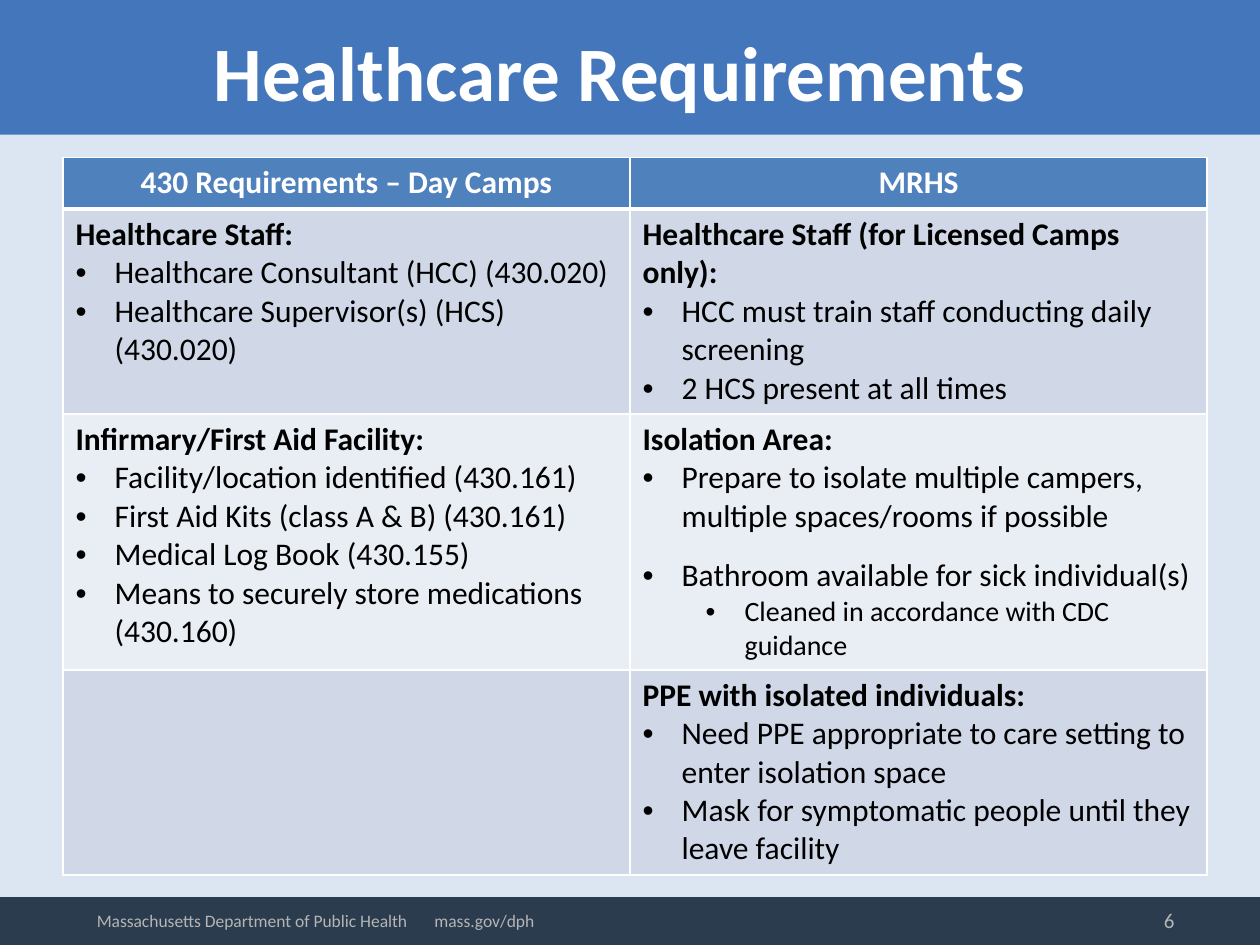
from dataclasses import dataclass
from typing import NamedTuple

from lxml import etree
from pptx import Presentation
from pptx.dml.color import RGBColor
from pptx.enum.shapes import MSO_SHAPE
from pptx.enum.text import MSO_ANCHOR, PP_ALIGN
from pptx.oxml.ns import qn
from pptx.util import Inches, Pt

RECT = MSO_SHAPE.RECTANGLE
MID = MSO_ANCHOR.MIDDLE
LEFT, MAIN, RIGHT = PP_ALIGN.LEFT, PP_ALIGN.CENTER, PP_ALIGN.RIGHT
COLS, ROWS = 100, 75
WIDE, HIGH = Inches(10), Inches(7.5)


@dataclass(frozen=True)
class Theme:
    font: str = "Calibri"
    back: str = "DCE6F2"
    band: str = "4376BB"
    foot: str = "2A3C4E"
    head: str = "4F81BD"
    odd: str = "D0D8E8"
    even: str = "E9EDF4"
    white: str = "FFFFFF"
    black: str = "000000"
    grey: str = "B5B5B5"
    title: int = 44
    body: int = 18
    sub: int = 16
    page: int = 12
    note: int = 10


class Box(NamedTuple):
    x: float
    y: float
    w: float
    h: float


class Item(NamedTuple):
    text: str
    level: int = 0
    after: int = 0


class Block(NamedTuple):
    head: str
    items: tuple


class Row(NamedTuple):
    high: float
    fill: str
    cells: tuple


T = Theme()
GRID = Box(5, 12.5, 90.8, 56.8)
SPLIT = (45, 45.8)
HEADS = ("430 Requirements – Day Camps", "MRHS")
BODY = (
    Row(16.2, T.odd, (
        Block("Healthcare Staff:", (
            Item("Healthcare Consultant (HCC) (430.020)"),
            Item("Healthcare Supervisor(s) (HCS) (430.020)"))),
        Block("Healthcare Staff (for Licensed Camps only):", (
            Item("HCC must train staff conducting daily screening"),
            Item("2 HCS present at all times"))))),
    Row(20.3, T.even, (
        Block("Infirmary/First Aid Facility:", (
            Item("Facility/location identified (430.161)"),
            Item("First Aid Kits (class A & B) (430.161)"),
            Item("Medical Log Book (430.155)"),
            Item("Means to securely store medications (430.160)"))),
        Block("Isolation Area:", (
            Item("Prepare to isolate multiple campers, multiple spaces/rooms if possible", after=12),
            Item("Bathroom available for sick individual(s)"),
            Item("Cleaned in accordance with CDC guidance", 1, 12))))),
    Row(16.2, T.odd, (
        None,
        Block("PPE with isolated individuals:", (
            Item("Need PPE appropriate to care setting to enter isolation space"),
            Item("Mask for symptomatic people until they leave facility"))))),
)


def across(n: float) -> int:
    return round(WIDE * n / COLS)


def down(n: float) -> int:
    return round(HIGH * n / ROWS)


def place(box: Box) -> tuple:
    return across(box.x), down(box.y), across(box.w), down(box.h)


def paint(fill, color: str) -> None:
    fill.solid()
    fill.fore_color.rgb = RGBColor.from_string(color)


def write(para, text: str, size: int, color: str, bold: bool = False, align=LEFT) -> None:
    para.alignment = align
    run = para.add_run()
    run.text = text
    form = {"name": T.font, "size": Pt(size), "bold": bold}
    for key, val in form.items():
        setattr(run.font, key, val)
    run.font.color.rgb = RGBColor.from_string(color)


def bar(slide, box: Box, color: str) -> None:
    shape = slide.shapes.add_shape(RECT, *place(box))
    shape.shadow.inherit = False
    paint(shape.fill, color)
    shape.line.fill.background()


def label(slide, box: Box, text: str, size: int, align=LEFT):
    frame = slide.shapes.add_textbox(*place(box)).text_frame
    form = {"word_wrap": True, "vertical_anchor": MID}
    for key, val in form.items():
        setattr(frame, key, val)
    write(frame.paragraphs[0], text, size, T.grey, align=align)
    return frame.paragraphs[0]


def tab(para, at: float) -> None:
    tabs = etree.SubElement(para._p.get_or_add_pPr(), qn("a:tabLst"))
    etree.SubElement(tabs, qn("a:tab"), pos=str(across(at)), algn="l")


def bullet(para, level: int) -> None:
    para.level = level
    props = para._p.get_or_add_pPr()
    props.set("marL", str(across(3.1 + 5 * level)))
    props.set("indent", str(-across(3.1)))
    etree.SubElement(props, qn("a:buFont"), typeface="Arial")
    etree.SubElement(props, qn("a:buChar"), char="•")


def edge(cell, top: int = 1, base: int = 1) -> None:
    props = cell._tc.get_or_add_tcPr()
    for side, size in {"L": 1, "R": 1, "T": top, "B": base}.items():
        line = etree.SubElement(props, qn(f"a:ln{side}"), w=str(Pt(size)))
        fill = etree.SubElement(line, qn("a:solidFill"))
        etree.SubElement(fill, qn("a:srgbClr"), val=T.white)


def fill_cell(cell, block: Block) -> None:
    frame = cell.text_frame
    write(frame.paragraphs[0], block.head, T.body, T.black, True)
    for item in block.items:
        para = frame.add_paragraph()
        if item.after:
            para.space_after = Pt(item.after)
        bullet(para, item.level)
        write(para, item.text, T.sub if item.level else T.body, T.black)


def draw_table(slide) -> None:
    table = slide.shapes.add_table(len(BODY) + 1, len(SPLIT), *place(GRID)).table
    for col, wide in zip(table.columns, SPLIT):
        col.width = across(wide)
    table.rows[0].height = down(4.1)
    for cell, text in zip(table.rows[0].cells, HEADS):
        edge(cell, base=3)
        paint(cell.fill, T.head)
        write(cell.text_frame.paragraphs[0], text, T.body, T.white, True, MAIN)
    for at, row in enumerate(BODY, 1):
        table.rows[at].height = down(row.high)
        for cell, block in zip(table.rows[at].cells, row.cells):
            edge(cell, top=3 if at == 1 else 1)
            paint(cell.fill, row.fill)
            if block:
                fill_cell(cell, block)


def draw_title(slide) -> None:
    title = slide.shapes.title
    title.element.getparent().append(title.element)
    for key, val in zip(("left", "top", "width", "height"), place(Box(4.2, 0, 90, 11.2))):
        setattr(title, key, val)
    title.text_frame.vertical_anchor = MID
    write(title.text_frame.paragraphs[0], "Healthcare Requirements", T.title, T.white, True, MAIN)


def main() -> None:
    deck = Presentation()
    deck.slide_width, deck.slide_height = WIDE, HIGH
    slide = deck.slides.add_slide(deck.slide_layouts[5])
    paint(slide.background.fill, T.back)
    bar(slide, Box(0, 0, COLS, 10.7), T.band)
    bar(slide, Box(0, 71.2, COLS, 3.8), T.foot)
    draw_title(slide)
    draw_table(slide)
    label(slide, Box(71.8, 71, 22.4, 4), "6", T.page, RIGHT)
    note = label(slide, Box(6.7, 71.2, 41.7, 3.7),
                 "Massachusetts Department of Public Health\tmass.gov/dph", T.note)
    tab(note, 26.8)
    deck.save("out.pptx")


if __name__ == "__main__":
    main()
